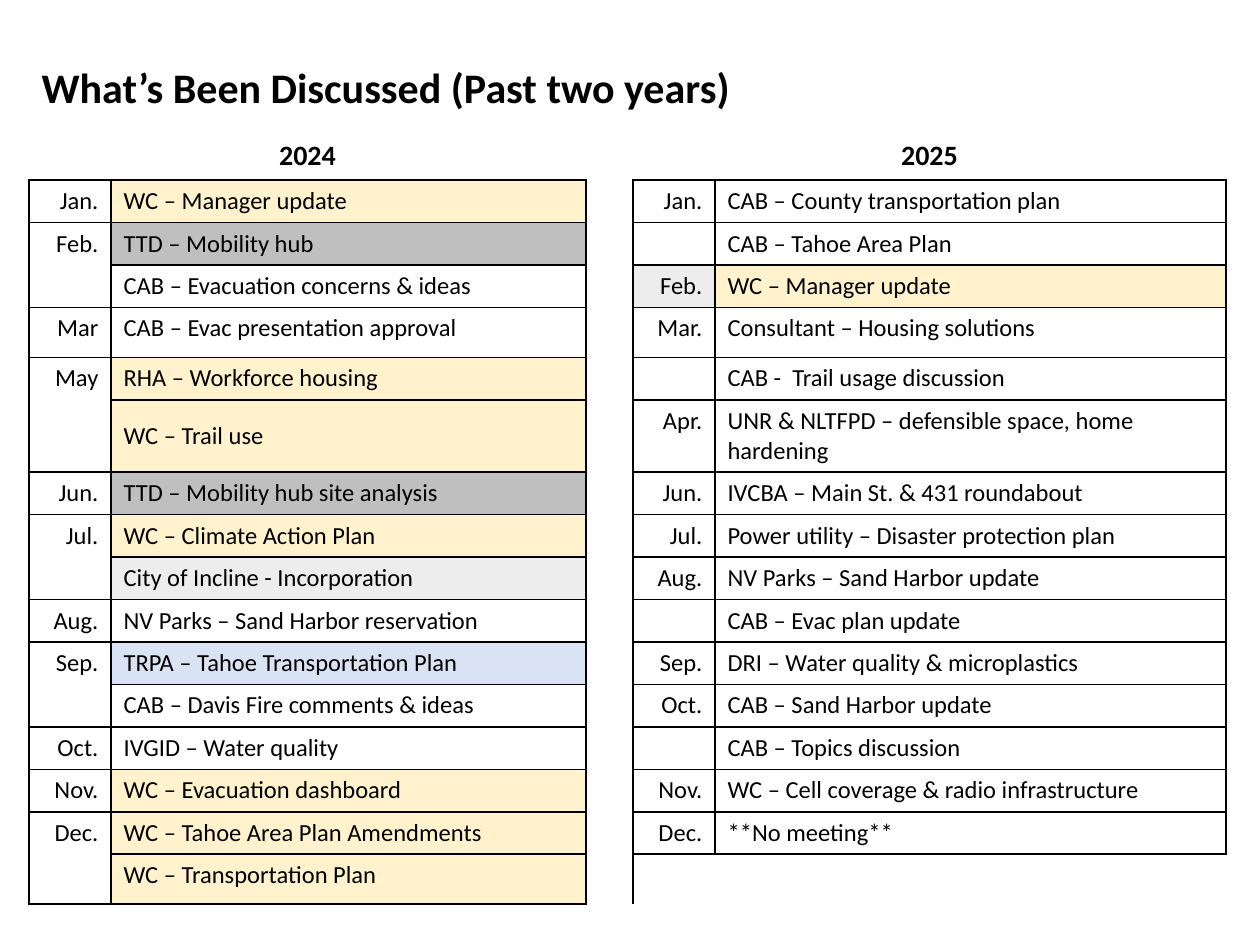
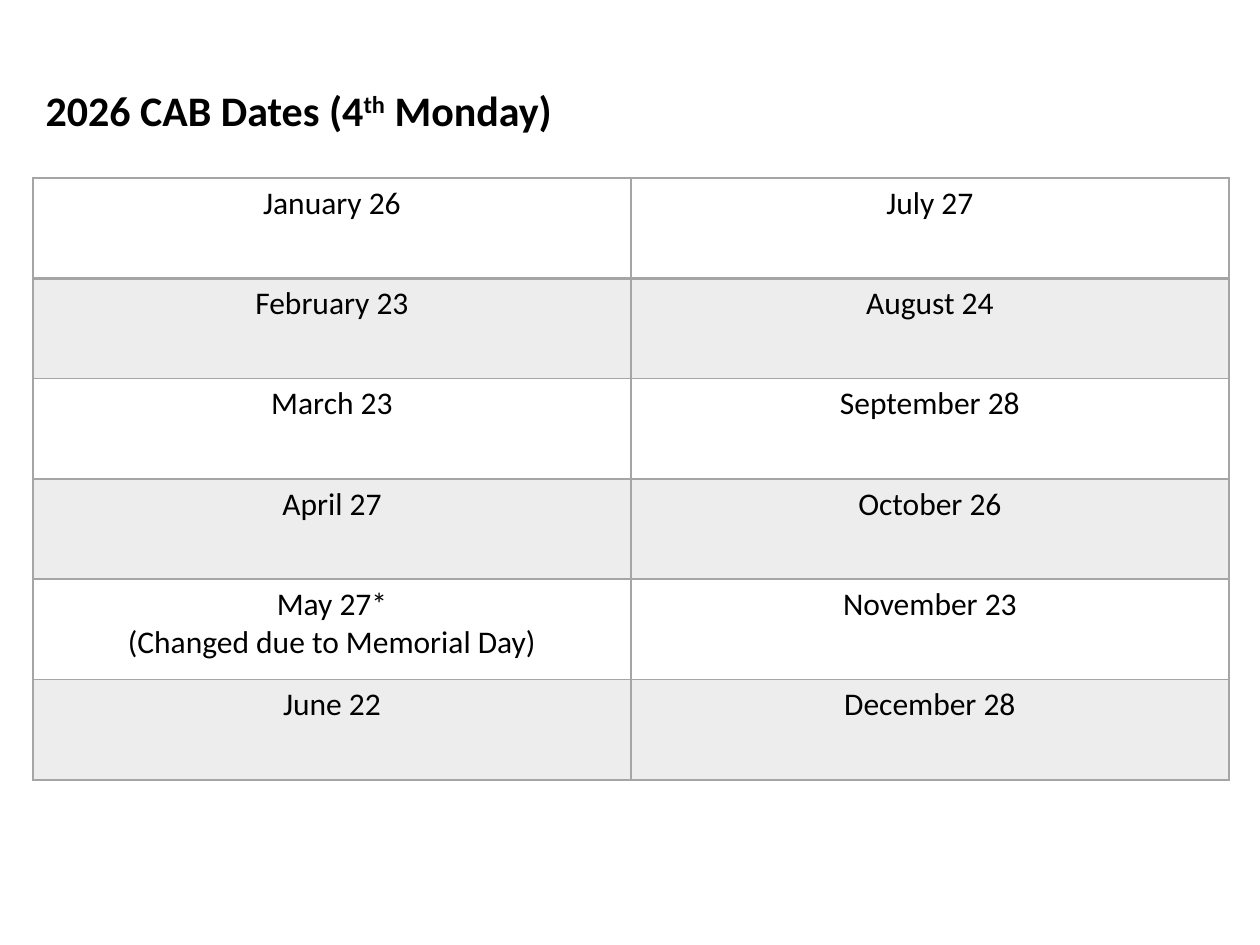
from lxml import etree
from pptx import Presentation
from pptx.dml.color import RGBColor
from pptx.enum.text import MSO_ANCHOR, MSO_AUTO_SIZE, PP_ALIGN
from pptx.oxml.ns import qn
from pptx.util import Pt

LEFT, CENTER, RIGHT = PP_ALIGN.LEFT, PP_ALIGN.CENTER, PP_ALIGN.RIGHT
TOP, MIDDLE = MSO_ANCHOR.TOP, MSO_ANCHOR.MIDDLE
NO_AUTOFIT = MSO_AUTO_SIZE.NONE

PX = 914400 / 126
FONT = "Calibri"
BLACK, LINE_GRAY = "000000", "A5A5A5"
COUNTY, TRANSIT, PALE_GRAY, AGENCY = "FFF2CC", "BFBFBF", "EDEDED", "DAE3F3"
PLAIN_TABLE = "{2D5ABB26-0587-4C30-8999-92F81FD0307C}"
TITLE_ONLY = 5


def format_text(paragraph, size, bold, align):
    paragraph.alignment = align
    font = paragraph.font
    font.name, font.size, font.bold = FONT, Pt(size), bold
    font.color.rgb = RGBColor.from_string(BLACK)


def fill_cell(cell, text, size, align, fill=None, bold=False,
              edges="LRTB", line=BLACK, thick=""):
    cell.text = text
    for paragraph in cell.text_frame.paragraphs:
        format_text(paragraph, size, bold, align)
        if not text:
            etree.SubElement(paragraph._p, qn("a:endParaRPr"), sz=str(size * 100))
    if fill:
        cell.fill.solid()
        cell.fill.fore_color.rgb = RGBColor.from_string(fill)
    else:
        cell.fill.background()
    properties = cell._tc.get_or_add_tcPr()
    for order, edge in enumerate(edges):
        width = Pt(2 if edge in thick else 1)
        border = etree.Element(qn(f"a:ln{edge}"), w=str(width))
        paint = etree.SubElement(border, qn("a:solidFill"))
        etree.SubElement(paint, qn("a:srgbClr"), val=line)
        properties.insert(order, border)


prs = Presentation()
prs.slide_width, prs.slide_height = int(1260 * PX), int(945 * PX)

pages = [
    ([("What’s Been Discussed (Past two years)", 0)],
     (29, 49, 1086, 82), (17, 5), (29, 133, 1197, 764)),
    ([("2026 CAB Dates (4", 0), ("th", 30000), (" Monday)", 0)],
     (33, 47, 1086, 131), (6, 2), (33, 178, 1196, 602)),
]
tables = []
for title_parts, title_box, grid, table_box in pages:
    slide = prs.slides.add_slide(prs.slide_layouts[TITLE_ONLY])
    title = slide.shapes.title
    title.left, title.top, title.width, title.height = (int(v * PX) for v in title_box)
    title.text_frame.auto_size = NO_AUTOFIT
    title.text_frame.vertical_anchor = MIDDLE
    heading = title.text_frame.paragraphs[0]
    heading.line_spacing = 0.9
    format_text(heading, 24, True, LEFT)
    for text, baseline in title_parts:
        run = heading.add_run()
        run.text = text
        if baseline:
            run._r.get_or_add_rPr().set("baseline", str(baseline))

    table = slide.shapes.add_table(*grid, *(int(v * PX) for v in table_box)).table
    table.first_row = table.horz_banding = False
    table._tbl.tblPr.find(qn("a:tableStyleId")).text = PLAIN_TABLE
    tables.append(table)

discussed, meeting_dates = tables

topics_2024 = [
    ("Jan.", "WC – Manager update", COUNTY),
    ("Feb.", "TTD – Mobility hub", TRANSIT),
    ("", "CAB – Evacuation concerns & ideas", None),
    ("Mar", "CAB – Evac presentation approval", None),
    ("May", "RHA – Workforce housing", COUNTY),
    ("", "WC – Trail use", COUNTY),
    ("Jun.", "TTD – Mobility hub site analysis", TRANSIT),
    ("Jul.", "WC – Climate Action Plan", COUNTY),
    ("", "City of Incline - Incorporation", PALE_GRAY),
    ("Aug.", "NV Parks – Sand Harbor reservation", None),
    ("Sep.", "TRPA – Tahoe Transportation Plan", AGENCY),
    ("", "CAB – Davis Fire comments & ideas", None),
    ("Oct.", "IVGID – Water quality", None),
    ("Nov.", "WC – Evacuation dashboard", COUNTY),
    ("Dec.", "WC – Tahoe Area Plan Amendments", COUNTY),
    ("", "WC – Transportation Plan", COUNTY),
]
topics_2025 = [
    ("Jan.", "CAB – County transportation plan", None),
    ("", "CAB – Tahoe Area Plan", None),
    ("Feb.", "WC – Manager update", COUNTY),
    ("Mar.", "Consultant – Housing solutions", None),
    ("", "CAB -  Trail usage discussion", None),
    ("Apr.", "UNR & NLTFPD – defensible space, home hardening", None),
    ("Jun.", "IVCBA – Main St. & 431 roundabout", None),
    ("Jul.", "Power utility – Disaster protection plan", None),
    ("Aug.", "NV Parks – Sand Harbor update", None),
    ("", "CAB – Evac plan update", None),
    ("Sep.", "DRI – Water quality & microplastics", None),
    ("Oct.", "CAB – Sand Harbor update", None),
    ("", "CAB – Topics discussion", None),
    ("Nov.", "WC – Cell coverage & radio infrastructure", None),
    ("Dec.", "**No meeting**", None),
]

for column, width in zip(discussed.columns, (82, 475, 47, 82, 511)):
    column.width = int(width * PX)
special_heights = {0: 47, 4: 50, 6: 72, 16: 50}
for number, row in enumerate(discussed.rows):
    row.height = int(special_heights.get(number, 42) * PX)

for year, topics, first in (("2024", topics_2024, 0), ("2025", topics_2025, 3)):
    for col, text in ((first, year), (first + 1, "")):
        fill_cell(discussed.cell(0, col), text, 16, CENTER, bold=True, edges="B")
    discussed.cell(0, first).merge(discussed.cell(0, first + 1))
    for row, (month, topic, fill) in enumerate(topics, 1):
        month_fill = PALE_GRAY if (year, month) == ("2025", "Feb.") else None
        fill_cell(discussed.cell(row, first), month, 14, RIGHT, month_fill)
        fill_cell(discussed.cell(row, first + 1), topic, 14, LEFT, fill)
        if year == "2024" and not month:
            discussed.cell(row - 1, first).merge(discussed.cell(row, first))
discussed.cell(6, 1).vertical_anchor = MIDDLE

for row in range(17):
    gap_edges = {0: "", 16: "L"}.get(row, "LR")
    fill_cell(discussed.cell(row, 2), "", 14, LEFT, edges=gap_edges)
for col in (3, 4):
    fill_cell(discussed.cell(16, col), "", 14, LEFT, edges="T")

dates = [
    ("January 26", "July 27"),
    ("February 23", "August 24"),
    ("March 23", "September 28"),
    ("April 27", "October 26"),
    ("May 27*\n(Changed due to Memorial Day)", "November 23"),
    ("June 22", "December 28"),
]
for row, halves in enumerate(dates):
    for col, date in enumerate(halves):
        fill_cell(meeting_dates.cell(row, col), date, 18, CENTER,
                  PALE_GRAY if row % 2 else None, line=LINE_GRAY,
                  thick={0: "B", 1: "T"}.get(row, ""))

prs.save("out.pptx")
